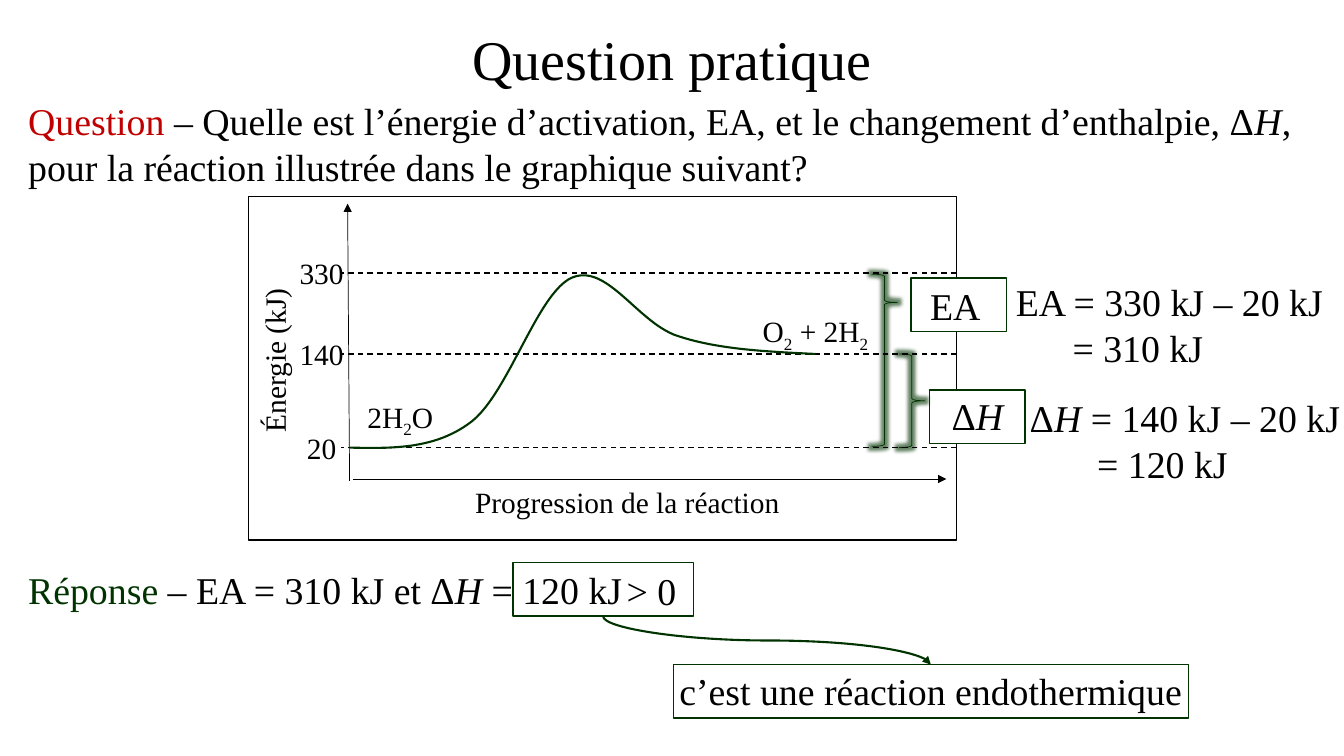
from lxml import etree
from pptx import Presentation
from pptx.dml.color import RGBColor
from pptx.enum.dml import MSO_LINE
from pptx.enum.shapes import MSO_CONNECTOR as Connector, MSO_SHAPE as Preset
from pptx.enum.text import MSO_ANCHOR, PP_ALIGN
from pptx.oxml.ns import qn
from pptx.util import Cm, Pt

COLORS = {"black": "000000", "white": "FFFFFF", "green": "003300", "red": "C00000"}
FONT = "Times New Roman"
CENTER, LEFT = PP_ALIGN.CENTER, PP_ALIGN.LEFT

presentation = Presentation()
presentation.slide_width, presentation.slide_height = Cm(33.87), Cm(19.05)
slide = presentation.slides.add_slide(presentation.slide_layouts[5])
shapes = slide.shapes


def add_text(position, runs, size, alignment=LEFT, result=None, indent=0):
    box = shapes.add_textbox(*map(Cm, position))
    frame = box.text_frame
    frame.word_wrap = True
    paragraph = frame.paragraphs[0]
    paragraph.alignment = alignment
    for text, style in runs:
        run = paragraph.add_run()
        run.text = text
        run.font.color.rgb = RGBColor.from_string(COLORS.get(style, COLORS["black"]))
        if style == "italic":
            run.font.italic = True
        if style == "subscript":
            run.font._element.set("baseline", "-25000")
    if result:
        paragraph = frame.add_paragraph()
        paragraph.text = result
        paragraph.runs[0].font.color.rgb = RGBColor.from_string(COLORS["black"])
        paragraph._p.get_or_add_pPr().set("marL", str(Cm(indent)))
    for paragraph in frame.paragraphs:
        for run in paragraph.runs:
            run.font.name, run.font.size = FONT, Pt(size)
    return box


def add_line(kind, start, end, color, width, arrow=False):
    connector = shapes.add_connector(kind, *map(Cm, start + end))
    connector.line.color.rgb = RGBColor.from_string(COLORS[color])
    connector.line.width = Pt(width)
    properties = connector._element.spPr
    if arrow:
        etree.SubElement(properties.find(qn("a:ln")), qn("a:tailEnd")).set("type", "triangle")
    etree.SubElement(properties, qn("a:effectLst"))
    return connector


title = shapes.title
title.left, title.top, title.width, title.height = map(Cm, (2.33, 0.3, 29.21, 2.54))
title.text_frame.text = "Question pratique"
title.text_frame.vertical_anchor = MSO_ANCHOR.MIDDLE
paragraph = title.text_frame.paragraphs[0]
paragraph.alignment, paragraph.line_spacing = CENTER, 0.9
font = paragraph.runs[0].font
font.name, font.size = FONT, Pt(40)
font.color.rgb = RGBColor.from_string(COLORS["black"])

frames = [
    ((12.93, 14.17, 4.55, 1.35), "green"),
    ((6.27, 4.95, 17.83, 8.66), "black"),
    ((22.96, 7.01, 2.41, 1.35), "green"),
    ((23.42, 9.83, 2.41, 1.35), "green"),
    ((16.97, 16.74, 12.98, 1.35), "green"),
]
for position, color in frames:
    rectangle = shapes.add_shape(Preset.RECTANGLE, *map(Cm, position))
    rectangle.shadow.inherit = False
    rectangle.fill.solid()
    rectangle.fill.fore_color.rgb = RGBColor.from_string(COLORS["white"])
    rectangle.line.color.rgb = RGBColor.from_string(COLORS[color])
    rectangle.line.width = Pt(1)

delta_h = [("Δ", ""), ("H", "italic")]
add_text((0.46, 2.34, 33.4, 2.57), [
    ("Question ", "red"),
    ("– Quelle est l’énergie d’activation, EA, et le changement d’enthalpie, ", ""),
    *delta_h,
    (", pour la réaction illustrée dans le graphique suivant?", ""),
], 27)
add_text((22.96, 6.99, 2.41, 1.42), [("EA ", "")], 27, CENTER)
add_text((23.22, 9.78, 2.82, 1.42), delta_h, 27, CENTER)
add_text((0.46, 14.15, 15.65, 1.42), [
    ("Réponse ", "green"), ("– EA = 310 kJ et ", ""), *delta_h, (" = 120 kJ", ""),
], 27)
add_text((25.35, 6.91, 9.07, 2.57), [("EA = 330 kJ – 20 kJ", "")], 27,
         result="= 310 kJ", indent=1.43)
add_text((25.7, 9.83, 9.07, 2.57), [*delta_h, (" = 140 kJ – 20 kJ", "")], 27,
         result="= 120 kJ", indent=1.7)

braces = [
    ((21.97, 6.91, 0.64, 4.34), (0.083, 0.164)),
    ((22.66, 8.92, 0.64, 2.36), (0.083, 0.5)),
]
for position, adjustments in braces:
    brace = shapes.add_shape(Preset.RIGHT_BRACE, *map(Cm, position))
    for index, value in enumerate(adjustments):
        brace.adjustments[index] = value
    brace.fill.background()
    brace.line.color.rgb = RGBColor.from_string(COLORS["green"])
    brace.line.width = Pt(0.5)
    brace.shadow.inherit = False
    effects = brace._element.spPr.find(qn("a:effectLst"))
    glow = etree.SubElement(effects, qn("a:glow"), rad=str(Pt(5)))
    glow_color = etree.SubElement(glow, qn("a:srgbClr"), val=COLORS["green"])
    etree.SubElement(glow_color, qn("a:alpha"), val="60000")

add_text((18.34, 7.77, 4.42, 1.14), [
    ("O", ""), ("2", "subscript"), (" + 2H", ""), ("2", "subscript"),
], 21, CENTER)
add_text((8.26, 9.93, 3.84, 1.14), [("2H", ""), ("2", "subscript"), ("O ", "")], 21, CENTER)

add_line(Connector.STRAIGHT, (8.81, 12.12), (8.76, 5.13), "black", 0.5, arrow=True)
add_line(Connector.STRAIGHT, (8.89, 12.07), (23.85, 12.07), "black", 0.5, arrow=True)
energy_label = add_text((4.8, 8.51, 4.22, 1.14), [("Énergie (kJ)", "")], 21, CENTER)
energy_label.rotation = 270
add_text((9.98, 12.07, 11.66, 1.14), [("Progression de la réaction", "")], 21, CENTER)

for energy, height in (("330", 6.88), ("140", 8.92), ("20", 11.28)):
    level = add_line(Connector.STRAIGHT, (24.1, height), (8.59, height), "black", 1)
    level.line.dash_style = MSO_LINE.DASH
    add_text((7.19, height - 0.57, 1.83, 1.14), [(energy, "")], 21, CENTER)

curve_nodes = [
    (8.81, 11.28), (9.88, 11.3), (10.97, 11.33), (11.89, 10.62),
    (12.83, 9.88), (13.56, 7.34), (14.43, 6.99),
    (15.32, 6.63), (16.1, 8.18), (17.12, 8.48),
    (18.14, 8.81), (19.35, 8.86), (20.55, 8.92),
]
STEPS = 24
curve_points = []
for first in range(0, len(curve_nodes) - 1, 3):
    segment = curve_nodes[first:first + 4]
    for step in range(1, STEPS + 1):
        t = step / STEPS
        weights = ((1 - t) ** 3, 3 * t * (1 - t) ** 2, 3 * t ** 2 * (1 - t), t ** 3)
        curve_points.append(tuple(
            Cm(sum(weight * node[axis] for weight, node in zip(weights, segment)))
            for axis in (0, 1)
        ))
builder = shapes.build_freeform(*map(Cm, curve_nodes[0]))
builder.add_line_segments(curve_points, close=False)
energy_curve = builder.convert_to_shape()
energy_curve.shadow.inherit = False
energy_curve.fill.background()
energy_curve.line.color.rgb = RGBColor.from_string(COLORS["green"])
energy_curve.line.width = Pt(1.5)

add_text((16.33, 16.71, 14.25, 1.42), [("c’est une réaction endothermique", "")], 27, CENTER)
answer_arrow = add_line(Connector.CURVE, (19.94, 12.01), (18.72, 20.27), "green", 1.5, arrow=True)
answer_arrow._element.spPr.find(qn("a:xfrm")).set("rot", str(270 * 60000))
add_text((15.54, 14.17, 2.18, 1.42), [("> 0", "")], 27)

presentation.save("out.pptx")
